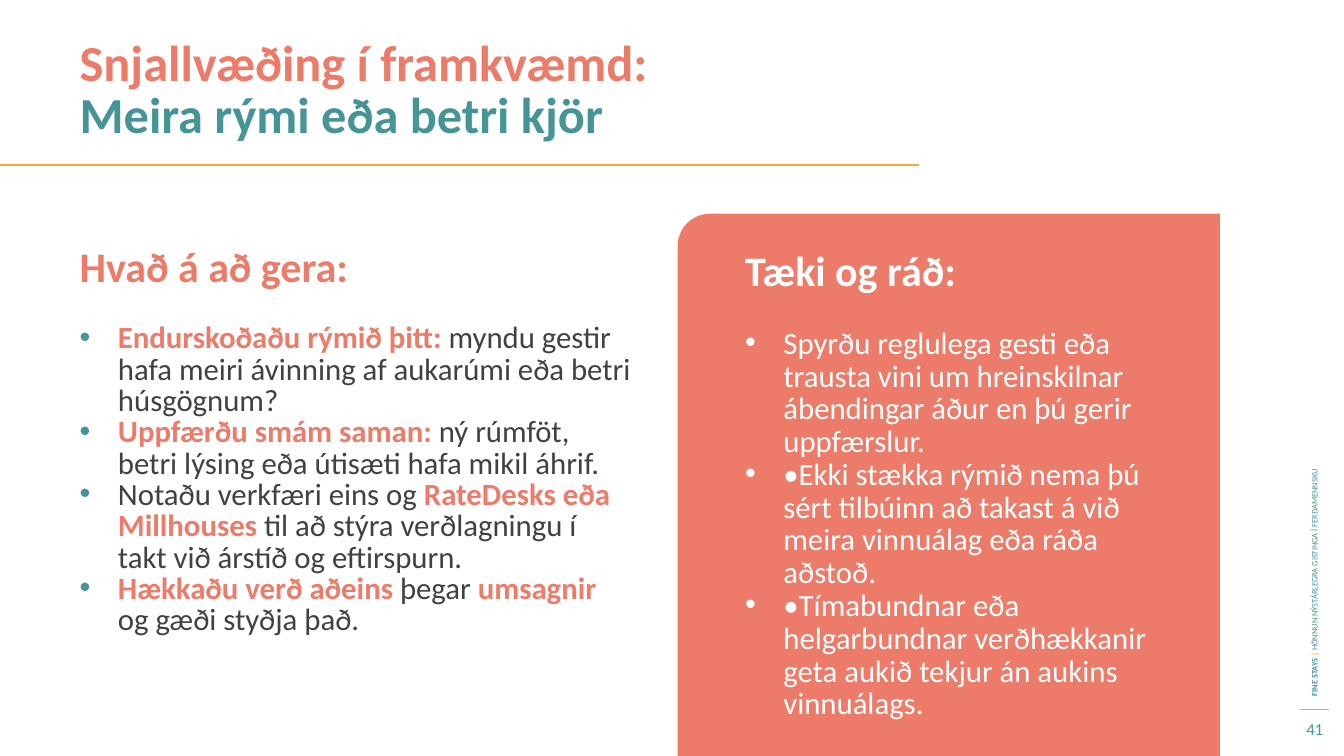
from lxml import etree
from pptx import Presentation
from pptx.dml.color import RGBColor
from pptx.enum.shapes import MSO_CONNECTOR, MSO_SHAPE
from pptx.enum.text import MSO_ANCHOR, MSO_AUTO_SIZE, PP_ALIGN
from pptx.oxml.ns import qn
from pptx.util import Inches, Pt

CORAL = RGBColor(0xEC, 0x7C, 0x69)
TEAL = RGBColor(0x45, 0x95, 0x97)
AMBER = RGBColor(0xFB, 0xA6, 0x3B)
GREY = RGBColor(0x41, 0x41, 0x41)
WHITE = RGBColor(0xFF, 0xFF, 0xFF)


def set_box(shape, place, anchor=MSO_ANCHOR.TOP):
    """Place a text shape (left, top, width, height) and return its frame."""
    shape.left, shape.top, shape.width, shape.height = map(Inches, place)
    frame = shape.text_frame
    frame.word_wrap = True
    frame.auto_size = MSO_AUTO_SIZE.NONE
    frame.vertical_anchor = anchor
    return frame


def add_para(frame, runs, size, pitch=None, bullet=None, align=PP_ALIGN.LEFT):
    """Add a paragraph of (text, colour, bold) runs; bullet is its colour."""
    para = frame.paragraphs[0]
    if para.runs:
        para = frame.add_paragraph()
    props = para._p.get_or_add_pPr()
    indent = Inches(0.38) if bullet else 0
    props.set("marL", str(indent))
    props.set("indent", str(-indent))
    if bullet:
        tint = etree.SubElement(props, qn("a:buClr"))
        etree.SubElement(tint, qn("a:srgbClr")).set("val", str(bullet))
        etree.SubElement(props, qn("a:buFont")).set("typeface", "Arial")
        etree.SubElement(props, qn("a:buChar")).set("char", "•")
    else:
        etree.SubElement(props, qn("a:buNone"))
    para.alignment = align
    para.space_before = Pt(0)
    if pitch:
        para.line_spacing = Pt(pitch)
    for text, color, bold in runs:
        run = para.add_run()
        run.text = text
        style = {"name": "Calibri", "size": Pt(size), "bold": bold}
        for key, value in style.items():
            setattr(run.font, key, value)
        run.font.color.rgb = color
    return para


prs = Presentation()
prs.slide_width, prs.slide_height = Inches(13.33), Inches(7.5)
slide = prs.slides.add_slide(prs.slide_layouts.get_by_name("Comparison"))
shapes = slide.shapes
title, head, tasks, spare, tips = slide.placeholders
spare.element.getparent().remove(spare.element)

# Panel behind the tips, turned so that the round corner is top left
panel = shapes.add_shape(MSO_SHAPE.ROUND_1_RECTANGLE, Inches(6.72),
                         Inches(2.12), Inches(5.38), Inches(5.38))
panel.adjustments[0] = 0.06
panel.rotation = 270
panel.shadow.inherit = False
panel.fill.solid()
panel.fill.fore_color.rgb = CORAL
panel.line.fill.background()
shapes._spTree.remove(panel.element)
shapes._spTree.insert(2, panel.element)

# Rules under the title and above the page number
for left, right, y, weight in [(0, 9.11, 1.64, 1.5), (12.89, 13.18, 7.04, 0.75)]:
    rule = shapes.add_connector(MSO_CONNECTOR.STRAIGHT, Inches(left), Inches(y),
                                Inches(right), Inches(y))
    rule.line.color.rgb = AMBER
    rule.line.width = Pt(weight)
    etree.SubElement(rule.element.spPr, qn("a:effectLst"))

# Title and left column
frame = set_box(title, (0.69, 0.34, 9.11, 0.88))
add_para(frame, [("Snjallvæðing í framkvæmd:", CORAL, True)], 36, 37.2)
add_para(frame, [("Meira rými eða betri kjör", TEAL, True)], 36, 37.2)

frame = set_box(head, (0.69, 2.43, 6.14, 0.73))
add_para(frame, [("Hvað á að gera:", CORAL, True)], 30, 29)

frame = set_box(tasks, (0.69, 3.16, 5.67, 4))
for runs in [
    [("Endurskoðaðu rýmið þitt: ", CORAL, True),
     ("myndu gestir hafa meiri ávinning af aukarúmi eða betri húsgögnum?",
      GREY, False)],
    [("Uppfærðu smám saman: ", CORAL, True),
     ("ný rúmföt, betri lýsing eða útisæti hafa mikil áhrif.", GREY, False)],
    [("Notaðu verkfæri eins og ", GREY, False),
     ("RateDesks eða Millhouses ", CORAL, True),
     ("til að stýra verðlagningu í takt við árstíð og eftirspurn.",
      GREY, False)],
    [("Hækkaðu verð aðeins ", CORAL, True), ("þegar ", GREY, False),
     ("umsagnir ", CORAL, True), ("og gæði styðja það.", GREY, False)],
]:
    add_para(frame, runs, 22, 22.4, TEAL)

# Tips on the panel
frame = set_box(tips, (7.29, 2.55, 4.45, 4.8))
lead = add_para(frame, [("Tæki og ráð:", WHITE, True)], 30, 23.4)
lead.space_after = Pt(23.4)
for tip in [
    "Spyrðu reglulega gesti eða trausta vini um hreinskilnar ábendingar "
    "áður en þú gerir uppfærslur.",
    "•Ekki stækka rýmið nema þú sért tilbúinn að takast á við meira "
    "vinnuálag eða ráða aðstoð.",
    "•Tímabundnar eða helgarbundnar verðhækkanir geta aukið tekjur án "
    "aukins vinnuálags.",
]:
    add_para(frame, [(tip, WHITE, False)], 22, 23.4, WHITE)

# Side strip and page number
strip = shapes.add_textbox(0, 0, 0, 0)
strip.rotation = 270
frame = set_box(strip, (10.15, 4.02, 5.77, 0.2), MSO_ANCHOR.MIDDLE)
add_para(frame, [("FINE STAYS ", TEAL, True), ("| ", AMBER, True),
                 ("HÖNNUN NÝSTÁRLEGRA GISTINGA Í FERÐAMENNSKU", TEAL, False)], 6)

number = shapes.add_textbox(0, 0, 0, 0)
frame = set_box(number, (12.78, 7.06, 0.52, 0.34), MSO_ANCHOR.MIDDLE)
add_para(frame, [("41", TEAL, False)], 12, align=PP_ALIGN.CENTER)

prs.save("out.pptx")
